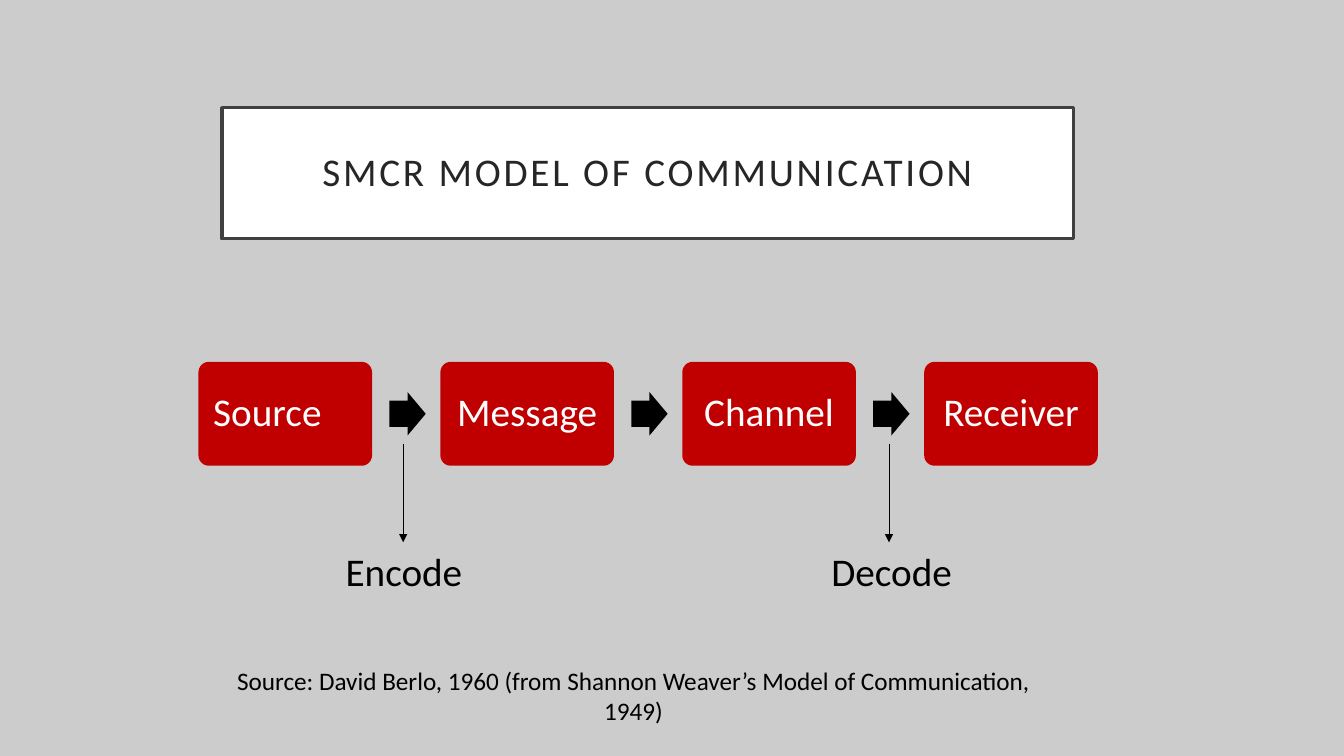
from dataclasses import dataclass

from lxml.etree import SubElement
from pptx import Presentation
from pptx.dml.color import RGBColor
from pptx.enum.shapes import MSO_CONNECTOR, MSO_SHAPE
from pptx.enum.text import MSO_ANCHOR, PP_ALIGN
from pptx.oxml.ns import qn
from pptx.util import Pt


@dataclass(frozen=True)
class Theme:
    font: str = "Calibri"
    backdrop: str = "CCCCCC"
    panel: str = "FFFFFF"
    border: str = "404040"
    heading: str = "262626"
    step: str = "C00000"
    step_text: str = "FFFFFF"
    ink: str = "000000"
    large: float = 28
    small: float = 18


THEME = Theme()


def rgb(code):
    return RGBColor.from_string(code)


def write(box, text, size=THEME.large, color=THEME.ink, align=PP_ALIGN.LEFT,
          anchor=MSO_ANCHOR.TOP, inset=(7.2, 3.6), leading=1.0, tracking=0):
    """Fill a shape with one paragraph; inset is (sides, top and bottom)."""
    frame = box.text_frame
    frame.word_wrap = True
    frame.vertical_anchor = anchor
    frame.margin_left = frame.margin_right = Pt(inset[0])
    frame.margin_top = frame.margin_bottom = Pt(inset[1])
    para = frame.paragraphs[0]
    para.alignment = align
    para.line_spacing = leading
    span = para.add_run()
    span.text = text
    span.font.name = THEME.font
    span.font.size = Pt(size)
    span.font.color.rgb = rgb(color)
    if tracking:
        span._r.get_or_add_rPr().set("spc", str(round(tracking * 100)))


def add_block(page, kind, left, top, width, height, fill, adjustments=()):
    block = page.shapes.add_shape(kind, Pt(left), Pt(top), Pt(width), Pt(height))
    block.shadow.inherit = False
    block.fill.solid()
    block.fill.fore_color.rgb = rgb(fill)
    block.line.fill.background()
    for index, value in enumerate(adjustments):
        block.adjustments[index] = value
    return block


def add_label(page, text, left, top, width, height, **style):
    label = page.shapes.add_textbox(Pt(left), Pt(top), Pt(width), Pt(height))
    write(label, text, **style)


def add_title(page, text, left, top, width, height):
    panel = add_block(page, MSO_SHAPE.RECTANGLE, left, top, width, height, THEME.panel)
    panel.line.color.rgb = rgb(THEME.border)
    panel.line.width = Pt(2.5)
    write(panel, text, color=THEME.heading, align=PP_ALIGN.CENTER,
          anchor=MSO_ANCHOR.MIDDLE, inset=(14.4, 14.4), leading=0.9, tracking=2)


def add_process(page, steps, left, top, width, height):
    """Spread the steps evenly over the box, with a block arrow in each gap."""
    step_width = 124
    pitch = (width - step_width) / (len(steps) - 1)
    arrow_width, arrow_height = 26, 31
    for index, (name, align) in enumerate(steps):
        x = left + index * pitch
        step = add_block(page, MSO_SHAPE.ROUNDED_RECTANGLE, x, top, step_width, height,
                         THEME.step, [0.1])
        write(step, name, color=THEME.step_text, align=align,
              anchor=MSO_ANCHOR.MIDDLE, inset=(8.4, 8.4), leading=0.9)
        if index < len(steps) - 1:
            add_block(page, MSO_SHAPE.RIGHT_ARROW, x + step_width + 12.3,
                      top + (height - arrow_height) / 2, arrow_width, arrow_height,
                      THEME.ink, [0.6, 0.5])


def add_callout(page, text, left, top, width, height):
    """Draw a downward arrow with its label at the foot of the box."""
    label_height = 41
    x, foot = left + 48.2, top + height - label_height
    arrow = page.shapes.add_connector(MSO_CONNECTOR.STRAIGHT, Pt(x), Pt(top), Pt(x), Pt(foot))
    arrow.line.color.rgb = rgb(THEME.ink)
    arrow.line.width = Pt(0.5)
    SubElement(arrow.line._get_or_add_ln(), qn("a:tailEnd"), type="triangle")
    SubElement(arrow._element.spPr, qn("a:effectLst"))
    add_label(page, text, left, foot, width, label_height)


def main():
    deck = Presentation()
    deck.slide_width, deck.slide_height = Pt(960), Pt(540)
    page = deck.slides.add_slide(deck.slide_layouts[6])
    page.background.fill.solid()
    page.background.fill.fore_color.rgb = rgb(THEME.backdrop)

    add_title(page, "SMCR MODEL OF COMMUNICATION", 158.4, 77, 608.4, 93.6)
    add_process(page, [("Source", PP_ALIGN.LEFT), ("Message", PP_ALIGN.CENTER),
                       ("Channel", PP_ALIGN.CENTER), ("Receiver", PP_ALIGN.CENTER)],
                141.8, 258.5, 642.4, 74.2)
    for text, left in (("Encode", 239.8), ("Decode", 586.8)):
        add_callout(page, text, left, 316.8, 120, 111.6)
    add_label(page, "Source: David Berlo, 1960 (from Shannon Weaver’s Model of Communication, 1949)",
              146, 471.6, 613, 50, size=THEME.small, align=PP_ALIGN.CENTER)
    deck.save("out.pptx")


if __name__ == "__main__":
    main()
